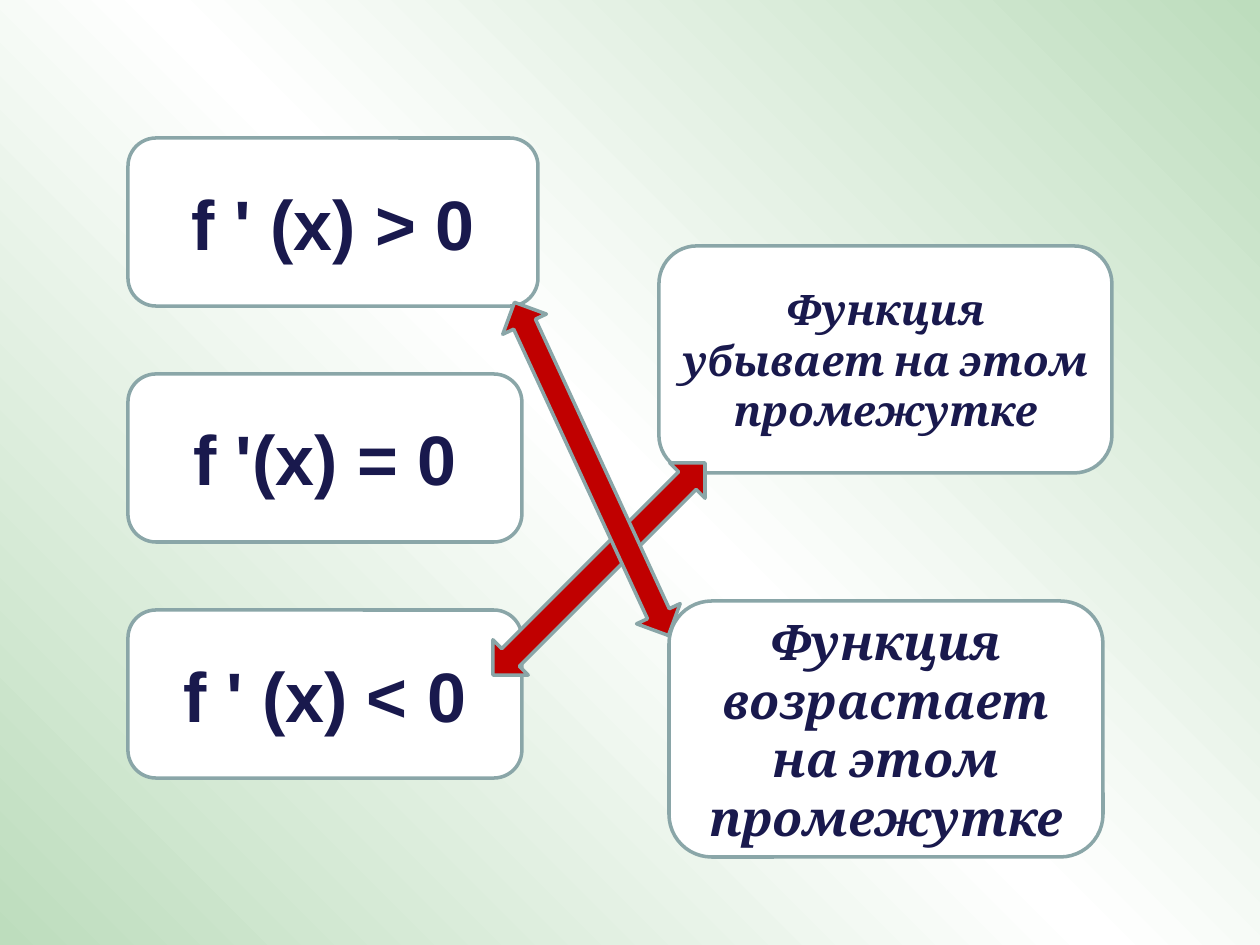
from copy import deepcopy

from pptx import Presentation
from pptx.dml.color import RGBColor
from pptx.enum.shapes import MSO_SHAPE
from pptx.enum.text import MSO_ANCHOR, PP_ALIGN
from pptx.oxml.ns import qn
from pptx.util import Emu, Pt

PX = 914400 // 126
COLORS = {
    "green": "BDDDBD",
    "white": "FFFFFF",
    "outline": "8AA6A8",
    "text": "19194D",
    "arrow": "C00000",
}


def color(name):
    return RGBColor.from_string(COLORS[name])


class SlideBuilder:
    """Holds the outline style and the slide being built."""

    line_width = Pt(2)

    def __init__(self, slide):
        self.slide = slide

    def background(self, names, angle):
        """Fill the background with evenly spaced gradient stops."""
        fill = self.slide.background.fill
        fill.gradient()
        fill.gradient_angle = angle
        stop_list = next(self.slide.element.iter(qn("a:gsLst")))
        while len(stop_list) < len(names):
            stop_list.append(deepcopy(stop_list[0]))
        for index, (stop, name) in enumerate(zip(fill.gradient_stops, names)):
            stop.position = index / (len(names) - 1)
            stop.color.rgb = color(name)

    def outlined(self, kind, box, fill):
        shape = self.slide.shapes.add_shape(kind, *(Emu(value * PX) for value in box))
        shape.shadow.inherit = False
        shape.fill.solid()
        shape.fill.fore_color.rgb = color(fill)
        shape.line.color.rgb = color("outline")
        shape.line.width = self.line_width
        return shape

    def card(self, box, text, font_name, size, italic=False):
        shape = self.outlined(MSO_SHAPE.ROUNDED_RECTANGLE, box, "white")
        frame = shape.text_frame
        frame.word_wrap = True
        frame.vertical_anchor = MSO_ANCHOR.MIDDLE
        paragraph = frame.paragraphs[0]
        paragraph.text = text
        paragraph.alignment = PP_ALIGN.CENTER
        font = paragraph.font
        font.name = font_name
        font.size = Pt(size)
        font.bold = True
        font.italic = italic
        font.color.rgb = color("text")

    def double_arrow(self, box, rotation):
        shape = self.outlined(MSO_SHAPE.LEFT_RIGHT_ARROW, box, "arrow")
        shape.rotation = rotation


def main():
    presentation = Presentation()
    presentation.slide_width = Emu(1260 * PX)
    presentation.slide_height = Emu(945 * PX)
    builder = SlideBuilder(presentation.slides.add_slide(presentation.slide_layouts[6]))
    builder.background(["green", "white", "green"], 45)

    conditions = [("f ' (х) > 0", 410), ("f '(х) = 0", 394), ("f ' (х) < 0", 394)]
    for row, (text, width) in enumerate(conditions):
        builder.card((128, 138 + 236 * row, width, 168), text, "Arial", 40)

    builder.card((659, 246, 453, 227), "Функция убывает на этом промежутке",
                 "Cambria", 24, italic=True)
    builder.card((669, 601, 434, 256), "Функция возрастает на этом промежутке",
                 "Cambria", 28, italic=True)

    builder.double_arrow((449, 544, 300, 50), 315)
    builder.double_arrow((408, 445, 367, 48), 65.2)

    presentation.save("out.pptx")


if __name__ == "__main__":
    main()
